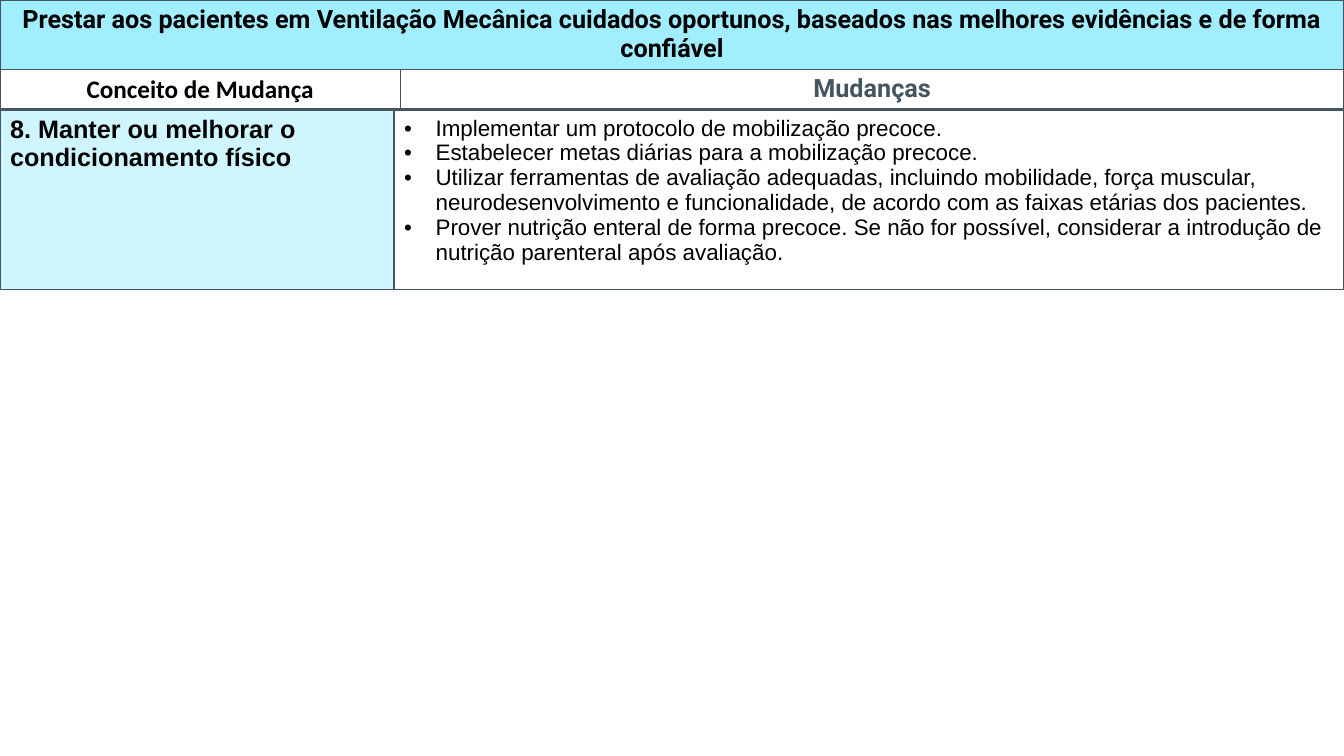
from dataclasses import dataclass

from lxml.etree import SubElement
from pptx import Presentation
from pptx.dml.color import RGBColor
from pptx.enum.text import MSO_ANCHOR as Anchor, PP_ALIGN as Align
from pptx.oxml.ns import qn
from pptx.slide import Slide
from pptx.table import Table, _Cell as Cell
from pptx.text.text import _Paragraph as Paragraph
from pptx.util import Pt

BLACK, WHITE, SLATE = "000000", "FFFFFF", "455560"
AQUA, PALE_AQUA = "A0EEFF", "CFF6FF"
BULLET_INDENT = 22.5


@dataclass
class CellText:
    lines: list[str]
    fill: str
    font: str = "Arial"
    size: float = 18
    bold: bool = True
    color: str = BLACK
    align: Align = Align.LEFT
    anchor: Anchor = Anchor.TOP
    bullets: bool = False
    margins: tuple[float, float, float, float] = (7.2, 3.6, 7.2, 3.6)


TITLE = CellText(
    ["Prestar aos pacientes em Ventilação Mecânica cuidados oportunos, "
     "baseados nas melhores evidências e de forma confiável"],
    AQUA, "Roboto", align=Align.CENTER)
CONCEPT_HEAD = CellText(
    ["Conceito de Mudança"], WHITE, "Calibri", align=Align.CENTER,
    anchor=Anchor.MIDDLE, margins=(0.7, 0.7, 0.7, 0))
CHANGES_HEAD = CellText(
    ["Mudanças"], WHITE, "Roboto", color=SLATE, align=Align.CENTER,
    anchor=Anchor.MIDDLE)
CONCEPT = CellText(["8. Manter ou melhorar o condicionamento físico"], PALE_AQUA)
CHANGES = CellText(
    ["Implementar um protocolo de mobilização precoce.",
     "Estabelecer metas diárias para a mobilização precoce.",
     "Utilizar ferramentas de avaliação adequadas, incluindo mobilidade, força "
     "muscular, neurodesenvolvimento e funcionalidade, de acordo com as faixas "
     "etárias dos pacientes.",
     "Prover nutrição enteral de forma precoce. Se não for possível, considerar "
     "a introdução de nutrição parenteral após avaliação."],
    WHITE, size=16, bold=False, bullets=True)


def rgb(color: str) -> RGBColor:
    return RGBColor.from_string(color)


def add_borders(cell: Cell) -> None:
    tc_pr = cell._tc.get_or_add_tcPr()
    for side in ("lnL", "lnR", "lnT", "lnB"):
        ln = SubElement(tc_pr, qn(f"a:{side}"), w=str(Pt(1)))
        SubElement(SubElement(ln, qn("a:solidFill")), qn("a:srgbClr"), val=SLATE)


def add_bullet(p: Paragraph) -> None:
    p_pr = p._p.get_or_add_pPr()
    p_pr.set("marL", str(Pt(BULLET_INDENT)))
    p_pr.set("indent", str(-Pt(BULLET_INDENT)))
    SubElement(p_pr, qn("a:buFont"), typeface="Arial")
    SubElement(p_pr, qn("a:buChar"), char="•")


def fill_cell(cell: Cell, content: CellText) -> None:
    cell.fill.solid()
    cell.fill.fore_color.rgb = rgb(content.fill)
    cell.vertical_anchor = content.anchor
    (cell.margin_left, cell.margin_top,
     cell.margin_right, cell.margin_bottom) = map(Pt, content.margins)
    tf = cell.text_frame
    tf.text = "\n".join(content.lines)
    for p in tf.paragraphs:
        p.alignment = content.align
        if content.bullets:
            add_bullet(p)
        p.font.name = content.font
        p.font.size = Pt(content.size)
        p.font.bold = content.bold
        p.font.color.rgb = rgb(content.color)


def add_grid(s: Slide, top: float, widths: list[float], heights: list[float]) -> Table:
    """Add a full-width table with thin borders and no banded style."""
    frame = s.shapes.add_table(len(heights), len(widths), Pt(0), Pt(top),
                               Pt(sum(widths)), Pt(sum(heights)))
    table = frame.table
    table.first_row = table.horz_banding = False
    for column, width in zip(table.columns, widths):
        column.width = Pt(width)
    for row, height in zip(table.rows, heights):
        row.height = Pt(height)
    for cell in table.iter_cells():
        add_borders(cell)
    return table


def main() -> None:
    prs = Presentation()
    prs.slide_width, prs.slide_height = Pt(960), Pt(540)
    s = prs.slides.add_slide(prs.slide_layouts[6])

    header = add_grid(s, 0, [286, 674], [49, 28.3])
    header.cell(0, 0).merge(header.cell(0, 1))
    fill_cell(header.cell(0, 0), TITLE)
    fill_cell(header.cell(1, 0), CONCEPT_HEAD)
    fill_cell(header.cell(1, 1), CHANGES_HEAD)

    body = add_grid(s, 79.2, [281.5, 678.5], [127.5])
    fill_cell(body.cell(0, 0), CONCEPT)
    fill_cell(body.cell(0, 1), CHANGES)

    prs.save("out.pptx")


if __name__ == "__main__":
    main()
